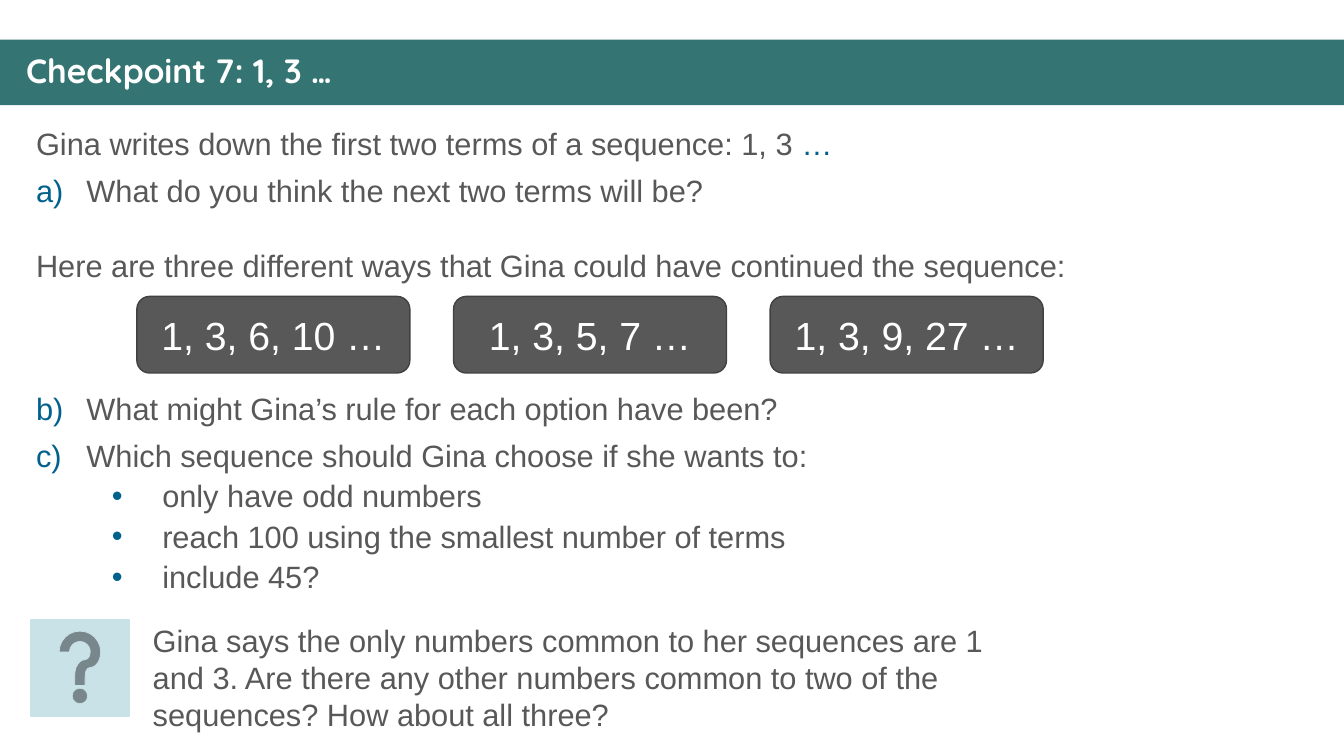
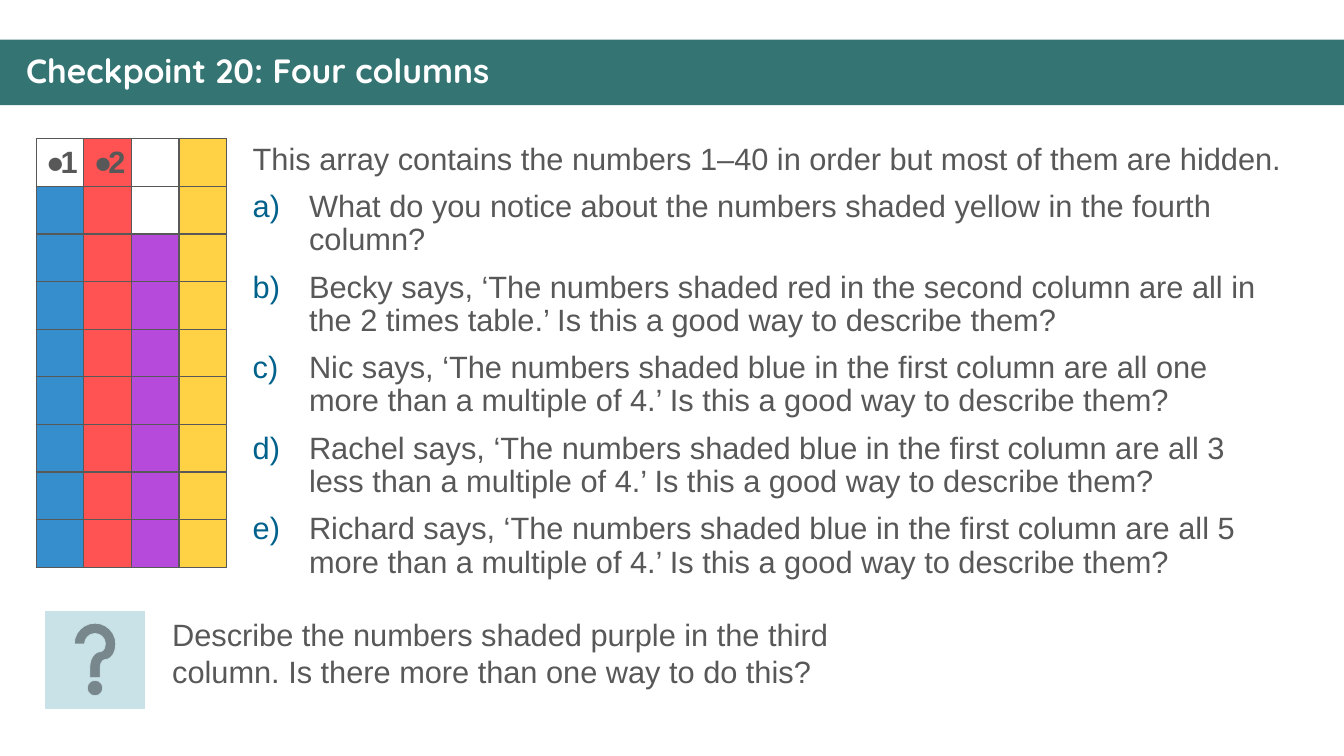
"""Build two checkpoint slides on number sequences and arrays."""
from lxml.etree import SubElement
from pptx import Presentation
from pptx.dml.color import RGBColor
from pptx.enum.shapes import MSO_SHAPE
from pptx.enum.text import MSO_ANCHOR, PP_ALIGN
from pptx.oxml.ns import qn
from pptx.util import Cm, Pt

TEAL = RGBColor(0x34, 0x75, 0x74)
WHITE = RGBColor(0xFF, 0xFF, 0xFF)
GREY = RGBColor(0x58, 0x58, 0x58)
DARK_GREY = RGBColor(0x41, 0x41, 0x41)
NAVY = RGBColor(0x00, 0x62, 0x8C)
PALE_BLUE = RGBColor(0xC8, 0xE2, 0xE8)
BLUE = RGBColor(0x00, 0x70, 0xC0)
RED = RGBColor(0xFF, 0x00, 0x00)
PURPLE = RGBColor(0x99, 0x00, 0xCC)
YELLOW = RGBColor(0xFF, 0xC0, 0x00)

OPACITY = {BLUE: 79, RED: 68, PURPLE: 71, YELLOW: 73}
HEADING = {"name": "Quicksand", "size": Pt(24), "bold": True}
BODY = {"name": "Arial", "size": Pt(22)}
CARD = {"name": "Arial", "size": Pt(28)}
CELL = {"name": "Arial", "size": Pt(22), "bold": True}
SPACED = {"line_spacing": 0.9, "space_before": Pt(10)}
TIGHT = {"line_spacing": 0.9, "space_before": Pt(5)}
CENTRED = {"alignment": PP_ALIGN.CENTER}
SLIDE_WIDTH, SLIDE_HEIGHT = Cm(33.87), Cm(19.05)


def apply(target, formats):
    for attribute, value in formats.items():
        setattr(target, attribute, value)


def add_child(parent, tag, **attributes):
    return SubElement(parent, qn(tag), {key: str(value) for key, value in attributes.items()})


class Deck:
    """Hold the shared style and the slide being built."""

    def __init__(self):
        self.presentation = Presentation()
        apply(self.presentation, {"slide_width": SLIDE_WIDTH, "slide_height": SLIDE_HEIGHT})
        self.slide = None

    def start(self, heading):
        layout = self.presentation.slide_layouts[5]
        self.slide = self.presentation.slides.add_slide(layout)
        band = self.slide.shapes.title
        apply(band, {"left": 0, "top": Cm(1), "width": SLIDE_WIDTH, "height": Cm(1.65)})
        self.paint(band, TEAL)
        apply(band.text_frame, {"vertical_anchor": MSO_ANCHOR.MIDDLE, "margin_left": Cm(0.66)})
        self.add_text(band.text_frame.paragraphs[0], heading, HEADING, WHITE,
                      {"alignment": PP_ALIGN.LEFT, "line_spacing": 0.9})

    def paint(self, shape, fill, outline=None, weight=1):
        shape.fill.solid()
        shape.fill.fore_color.rgb = fill
        if outline is not None:
            shape.line.color.rgb = outline
            shape.line.width = Pt(weight)

    def add_text(self, paragraph, text, font, color, layout):
        apply(paragraph, layout)
        run = paragraph.add_run()
        run.text = text
        apply(run.font, font)
        run.font.color.rgb = color

    def mark(self, paragraph, margin, hanging, letter=None, symbol="•", color=NAVY):
        properties = paragraph._p.get_or_add_pPr()
        properties.set("marL", str(Cm(margin)))
        properties.set("indent", str(-Cm(hanging)))
        if color is not None:
            add_child(add_child(properties, "a:buClr"), "a:srgbClr", val=color)
        add_child(properties, "a:buFont", typeface="Arial")
        if letter:
            add_child(properties, "a:buAutoNum", type="alphaLcParenR", startAt=letter)
        else:
            add_child(properties, "a:buChar", char=symbol)

    def text_box(self, left, top, width, height):
        box = self.slide.shapes.add_textbox(Cm(left), Cm(top), Cm(width), Cm(height))
        box.text_frame.word_wrap = True
        return box.text_frame

    def line(self, frame, text, layout=SPACED):
        first = frame.paragraphs[0]
        paragraph = frame.add_paragraph() if first.runs else first
        self.add_text(paragraph, text, BODY, GREY, layout)
        return paragraph

    def questions(self, frame, texts, start, hanging):
        return [self.question(frame, text, start, hanging) for text in texts]

    def question(self, frame, text, start, hanging):
        paragraph = self.line(frame, text)
        self.mark(paragraph, hanging, hanging, letter=start)
        return paragraph

    def card(self, text, left, top, width, height):
        card = self.slide.shapes.add_shape(
            MSO_SHAPE.ROUNDED_RECTANGLE, Cm(left), Cm(top), Cm(width), Cm(height))
        card.shadow.inherit = False
        self.paint(card, GREY, DARK_GREY)
        card.text_frame.vertical_anchor = MSO_ANCHOR.MIDDLE
        self.add_text(card.text_frame.paragraphs[0], text, CARD, WHITE, CENTRED)

    def challenge(self, text, left, top, text_left, text_top, width, height):
        icon = self.slide.shapes.add_shape(
            MSO_SHAPE.ACTION_BUTTON_HELP, Cm(left), Cm(top), Cm(2.51), Cm(2.44))
        icon.shadow.inherit = False
        self.paint(icon, PALE_BLUE, PALE_BLUE, 0.5)
        self.line(self.text_box(text_left, text_top, width, height), text, {})

    def array(self, rows, numbers, left, top, side):
        width, height = side * len(rows[0]), side * len(rows)
        table = self.slide.shapes.add_table(
            len(rows), len(rows[0]), Cm(left), Cm(top), Cm(width), Cm(height)).table
        apply(table, {"first_row": False, "horz_banding": False})
        for row_index, colors in enumerate(rows):
            for column_index, color in enumerate(colors):
                self.square(table.cell(row_index, column_index), color)
        for column_index, number in enumerate(numbers):
            paragraph = table.cell(0, column_index).text_frame.paragraphs[0]
            self.add_text(paragraph, number, CELL, GREY, CENTRED)
            self.mark(paragraph, 0, 0, symbol="●", color=None)

    def square(self, cell, color):
        cell.vertical_anchor = MSO_ANCHOR.MIDDLE
        properties = cell._tc.get_or_add_tcPr()
        for edge in ("a:lnL", "a:lnR", "a:lnT", "a:lnB"):
            border = add_child(properties, edge, w=Pt(1))
            add_child(add_child(border, "a:solidFill"), "a:srgbClr", val=GREY)
        if color is None:
            cell.fill.background()
            return
        self.paint(cell, color)
        tint = properties.find(qn("a:solidFill")).find(qn("a:srgbClr"))
        add_child(tint, "a:alpha", val=OPACITY[color] * 1000)


def build_sequence_slide(deck):
    deck.start("Checkpoint 7: 1, 3 …")
    frame = deck.text_box(0.66, 3.12, 32.18, 12.2)
    opening = deck.line(frame, "Gina writes down the first two terms of a sequence: 1, 3 ")
    deck.add_text(opening, "…", BODY, NAVY, {})
    deck.question(frame, "What do you think the next two terms will be?", 1, 1.27)
    deck.line(frame, "Here are three different ways that Gina could have continued the sequence:",
              {**SPACED, "space_before": Pt(30)})
    after_cards, _ = deck.questions(frame, [
        "What might Gina’s rule for each option have been?",
        "Which sequence should Gina choose if she wants to:",
    ], 2, 1.27)
    after_cards.space_before = Pt(78)
    for goal in ("only have odd numbers",
                 "reach 100 using the smallest number of terms",
                 "include 45?"):
        deck.mark(deck.line(frame, goal, TIGHT), 3.18, 1.27)
    for index, sequence in enumerate(("1, 3, 6, 10 …", "1, 3, 5, 7 …", "1, 3, 9, 27 …")):
        deck.card(sequence, 3.45 + 7.98 * index, 7.47, 6.88, 1.93)
    deck.challenge("Gina says the only numbers common to her sequences are 1 and 3. "
                   "Are there any other numbers common to two of the sequences? "
                   "How about all three?", 0.76, 15.6, 3.6, 15.54, 22.53, 3.07)


def build_array_slide(deck):
    deck.start("Checkpoint 20: Four columns")
    rows = [[None, RED, None, YELLOW], [BLUE, RED, None, YELLOW]]
    rows += [[BLUE, RED, PURPLE, YELLOW]] * 7
    deck.array(rows, "12", 0.91, 3.5, 1.2)
    frame = deck.text_box(6.12, 3.5, 26.54, 11.86)
    deck.line(frame, "This array contains the numbers 1–40 in order but most of them are hidden.")
    claims = [
        ("Becky", "red in the second column are all in the 2 times table"),
        ("Nic", "blue in the first column are all one more than a multiple of 4"),
        ("Rachel", "blue in the first column are all 3 less than a multiple of 4"),
        ("Richard", "blue in the first column are all 5 more than a multiple of 4"),
    ]
    deck.questions(frame, [
        "What do you notice about the numbers shaded yellow in the fourth column?",
        *(f"{name} says, ‘The numbers shaded {claim}.’ Is this a good way to describe them?"
          for name, claim in claims),
    ], 1, 1.42)
    deck.challenge("Describe the numbers shaded purple in the third column. "
                   "Is there more than one way to do this?",
                   1.14, 15.4, 4.09, 15.4, 18.11, 2.13)


def main():
    deck = Deck()
    build_sequence_slide(deck)
    build_array_slide(deck)
    deck.presentation.save("out.pptx")


if __name__ == "__main__":
    main()
